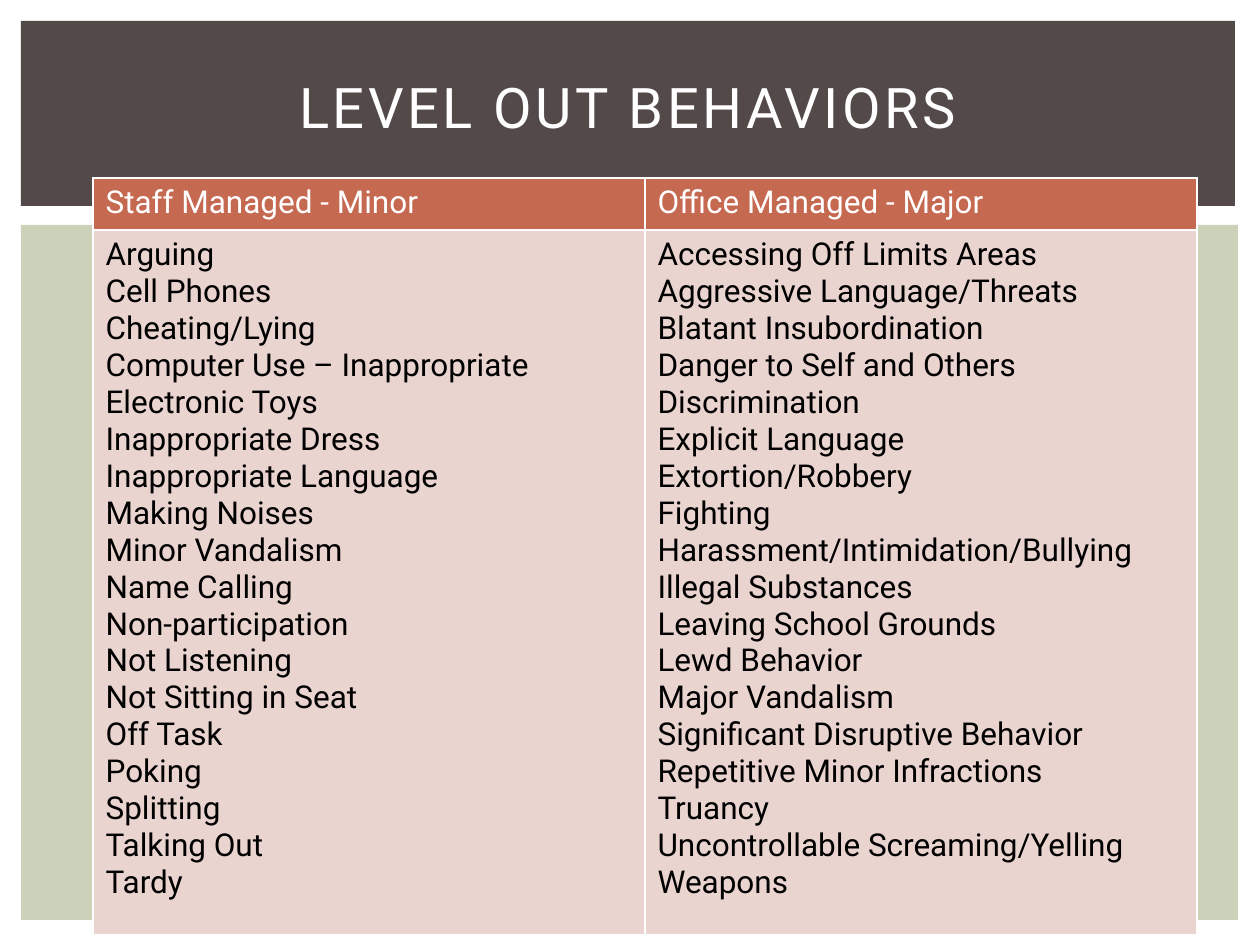
from dataclasses import dataclass

from pptx import Presentation
from pptx.dml.color import RGBColor
from pptx.enum.shapes import MSO_SHAPE
from pptx.enum.text import MSO_ANCHOR, MSO_AUTO_SIZE, PP_ALIGN
from pptx.oxml import parse_xml
from pptx.oxml.ns import nsdecls
from pptx.slide import Slide
from pptx.table import _Cell as Cell
from pptx.text.text import TextFrame
from pptx.util import Emu, Pt

PX_PER_INCH = 126
FONT = "Roboto"
WHITE, BLACK = "FFFFFF", "000000"
HEADER_FILL, BODY_FILL = "C66951", "EAD4D0"
ROW_HEIGHTS = (52, 705)
BORDER_POINTS = 1


@dataclass(frozen=True)
class Box:
    left: int
    top: int
    width: int
    height: int

    def emu(self) -> tuple[Emu, Emu, Emu, Emu]:
        return px(self.left), px(self.top), px(self.width), px(self.height)


@dataclass(frozen=True)
class Panel:
    box: Box
    fill: str


@dataclass(frozen=True)
class Category:
    heading: str
    behaviors: tuple[str, ...]


PANELS = (
    Panel(Box(21, 225, 1217, 695), "CCD1B9"),
    Panel(Box(21, 21, 1214, 185), "534949"),
)
TITLE_BOX = Box(59, 34, 1138, 144)
TABLE_BOX = Box(93, 178, 1104, sum(ROW_HEIGHTS))

CATEGORIES = (
    Category("Staff Managed - Minor", (
        "Arguing",
        "Cell Phones",
        "Cheating/Lying",
        "Computer Use – Inappropriate",
        "Electronic Toys",
        "Inappropriate Dress",
        "Inappropriate Language",
        "Making Noises",
        "Minor Vandalism",
        "Name Calling",
        "Non-participation",
        "Not Listening",
        "Not Sitting in Seat",
        "Off Task",
        "Poking",
        "Splitting",
        "Talking Out",
        "Tardy",
    )),
    Category("Office Managed - Major", (
        "Accessing Off Limits Areas",
        "Aggressive Language/Threats",
        "Blatant Insubordination",
        "Danger to Self and Others",
        "Discrimination",
        "Explicit Language",
        "Extortion/Robbery",
        "Fighting",
        "Harassment/Intimidation/Bullying",
        "Illegal Substances",
        "Leaving School Grounds",
        "Lewd Behavior",
        "Major Vandalism",
        "Significant Disruptive Behavior",
        "Repetitive Minor Infractions",
        "Truancy",
        "Uncontrollable Screaming/Yelling",
        "Weapons",
    )),
)


def px(length: int) -> Emu:
    return Emu(round(length * 914400 / PX_PER_INCH))


def color(value: str) -> RGBColor:
    return RGBColor.from_string(value)


def write(frame: TextFrame, lines: tuple[str, ...], size: int, font_color: str) -> None:
    frame.text = "\n".join(lines)
    for paragraph in frame.paragraphs:
        font = paragraph.font
        font.name, font.size, font.bold = FONT, Pt(size), False
        font.color.rgb = color(font_color)


def draw_panel(slide: Slide, panel: Panel) -> None:
    shape = slide.shapes.add_shape(MSO_SHAPE.RECTANGLE, *panel.box.emu())
    shape.shadow.inherit = False
    shape.fill.solid()
    shape.fill.fore_color.rgb = color(panel.fill)
    shape.line.fill.background()


def add_borders(cell: Cell) -> None:
    properties = cell._tc.get_or_add_tcPr()
    for index, side in enumerate("LRTB"):
        properties.insert(index, parse_xml(
            f'<a:ln{side} {nsdecls("a")} w="{Pt(BORDER_POINTS)}"><a:solidFill>'
            f'<a:srgbClr val="{WHITE}"/></a:solidFill></a:ln{side}>'))


def fill_cell(cell: Cell, lines: tuple[str, ...], fill: str, font_color: str) -> None:
    write(cell.text_frame, lines, 18, font_color)
    cell.fill.solid()
    cell.fill.fore_color.rgb = color(fill)
    add_borders(cell)


def draw_table(slide: Slide, box: Box, categories: tuple[Category, ...]) -> None:
    table = slide.shapes.add_table(len(ROW_HEIGHTS), len(categories), *box.emu()).table
    for row, height in zip(table.rows, ROW_HEIGHTS):
        row.height = px(height)
    for column, category in enumerate(categories):
        table.columns[column].width = px(box.width // len(categories))
        fill_cell(table.cell(0, column), (category.heading,), HEADER_FILL, WHITE)
        fill_cell(table.cell(1, column), category.behaviors, BODY_FILL, BLACK)


def draw_title(slide: Slide, box: Box, text: str) -> None:
    title = slide.shapes.title
    title.left, title.top, title.width, title.height = box.emu()
    frame = title.text_frame
    write(frame, (text,), 32, WHITE)
    frame.auto_size = MSO_AUTO_SIZE.NONE
    frame.vertical_anchor = MSO_ANCHOR.MIDDLE
    paragraph = frame.paragraphs[0]
    paragraph.alignment = PP_ALIGN.CENTER
    paragraph.runs[0]._r.get_or_add_rPr().set("spc", "200")
    slide.shapes._spTree.append(title._element)


def main() -> None:
    """Build the behavior levels slide and save it."""
    presentation = Presentation()
    presentation.slide_width, presentation.slide_height = px(1260), px(945)
    slide = presentation.slides.add_slide(presentation.slide_layouts.get_by_name("Title Only"))
    for panel in PANELS:
        draw_panel(slide, panel)
    draw_table(slide, TABLE_BOX, CATEGORIES)
    draw_title(slide, TITLE_BOX, "LEVEL OUT BEHAVIORS")
    presentation.save("out.pptx")


if __name__ == "__main__":
    main()
